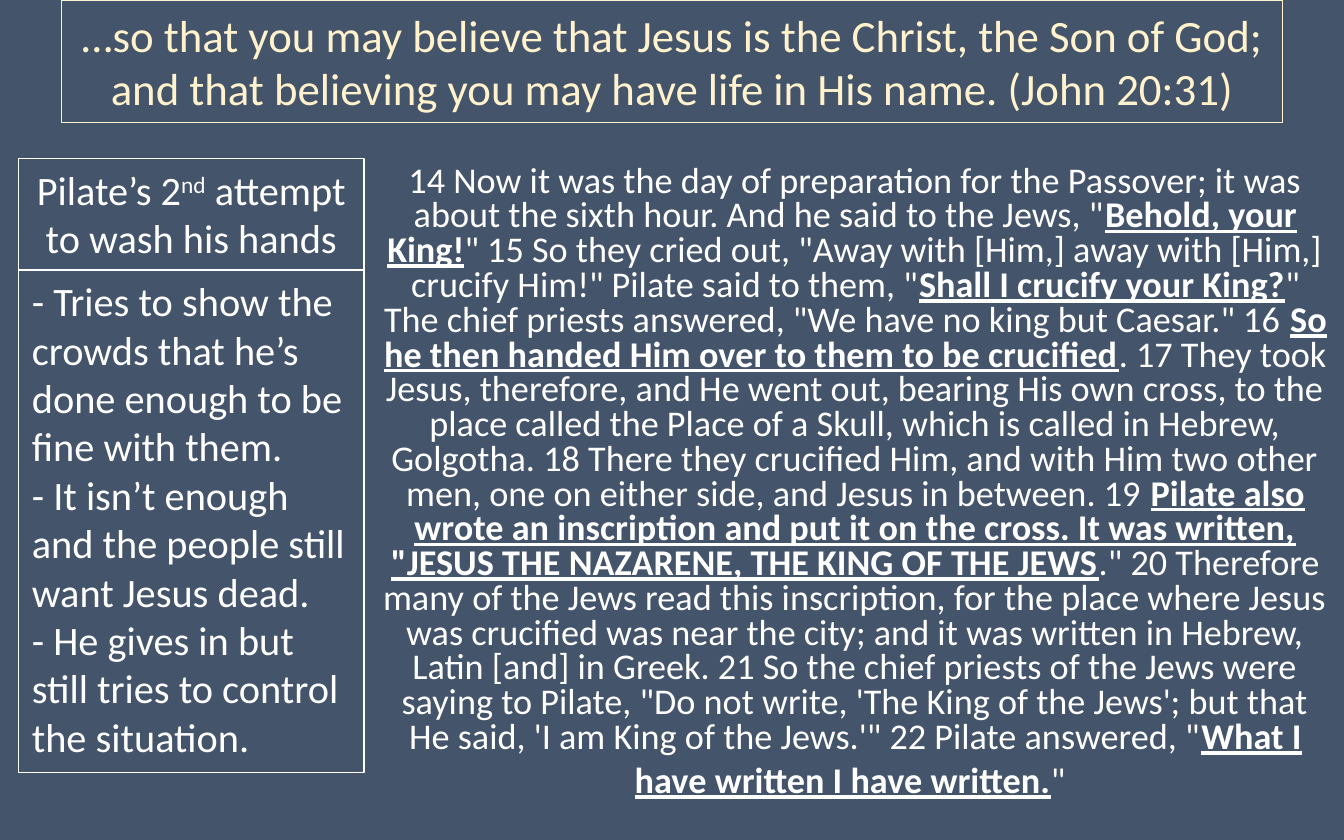
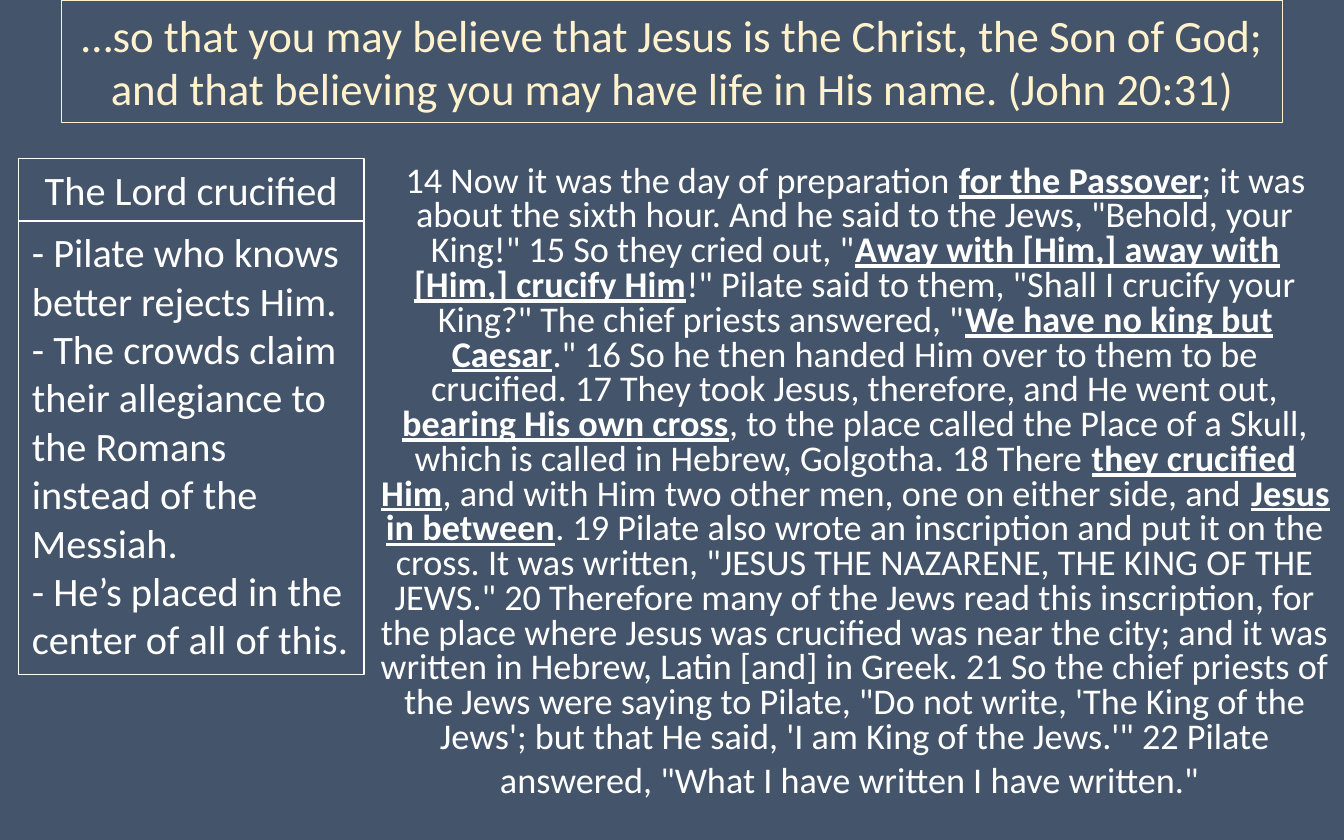
from lxml import etree
from pptx import Presentation
from pptx.dml.color import RGBColor
from pptx.enum import text as t
from pptx.oxml import ns
from pptx.util import Pt

COLORS = {"background": "44546A", "banner": "FFF2CC", "text": "FFFFFF"}
FONT = "Calibri"

BANNER_VERSE = (
    "…so that you may believe that Jesus is the Christ, the Son of God; "
    "and that believing you may have life in His name. (John 20:31)"
)
PASSAGE_VERSES = [
    "14 Now it was the day of preparation for the Passover; it was about the sixth hour. "
    'And he said to the Jews, "Behold, your King!"',
    '15 So they cried out, "Away with [Him,] away with [Him,] crucify Him!" '
    'Pilate said to them, "Shall I crucify your King?" '
    'The chief priests answered, "We have no king but Caesar."',
    "16 So he then handed Him over to them to be crucified.",
    "17 They took Jesus, therefore, and He went out, bearing His own cross, to the place "
    "called the Place of a Skull, which is called in Hebrew, Golgotha.",
    "18 There they crucified Him, and with Him two other men, one on either side, "
    "and Jesus in between.",
    "19 Pilate also wrote an inscription and put it on the cross. "
    'It was written, "JESUS THE NAZARENE, THE KING OF THE JEWS."',
    "20 Therefore many of the Jews read this inscription, for the place where Jesus was "
    "crucified was near the city; and it was written in Hebrew, Latin [and] in Greek.",
    '21 So the chief priests of the Jews were saying to Pilate, "Do not write, '
    "'The King of the Jews'; but that He said, 'I am King of the Jews.'\"",
    '22 Pilate answered, "What I have written I have written."',
]
# Line counts give the heights of the side boxes; emphasis lists phrases in reading order.
SLIDES = [
    {
        "heading": [("Pilate’s 2", {}), ("nd", {"baseline": 30000}),
                    (" attempt to wash his hands", {})],
        "heading_lines": 2,
        "points": [
            "- Tries to show the crowds that he’s done enough to be fine with them.",
            "- It isn’t enough and the people still want Jesus dead.",
            "- He gives in but still tries to control the situation.",
        ],
        "point_lines": 10,
        "emphasis": [
            "Behold, your King!",
            "Shall I crucify your King?",
            "So he then handed Him over to them to be crucified",
            "Pilate also wrote an inscription and put it on the cross. "
            'It was written, "JESUS THE NAZARENE, THE KING OF THE JEWS',
            "What I have written I have written.",
        ],
    },
    {
        "heading": [("The Lord crucified", {})],
        "heading_lines": 1,
        "points": [
            "- Pilate who knows better rejects Him.",
            "- The crowds claim their allegiance to the Romans instead of the Messiah.",
            "- He’s placed in the center of all of this.",
        ],
        "point_lines": 9,
        "emphasis": [
            "for the Passover",
            "Away with [Him,] away with [Him,] crucify Him",
            "We have no king but Caesar",
            "bearing His own cross",
            "they crucified Him",
            "Jesus in between",
        ],
    },
]

SLIDE_SIZE = (720, 450)
BANNER = (33, 0, 654, 65.5)
TOP = 85
SIDE_LEFT, SIDE_WIDTH = 10, 185
SIDE_LINE, SIDE_PADDING = 26.2, 7.2
PASSAGE_BOX = (196.6, TOP, 523.4, 365)
BANNER_SIZE, SIDE_SIZE, PASSAGE_SIZE, CLOSING_SIZE = 24, 21.6, 19.4, 25.9
STRONG = {"bold": True, "underline": True}


def place(shape, box):
    for name, value in zip(("left", "top", "width", "height"), box):
        setattr(shape, name, Pt(value))


def outline(shape, color):
    shape.line.color.rgb = RGBColor.from_string(COLORS[color])
    shape.line.width = Pt(0.75)


def write(paragraph, pieces, size, color="text", **layout):
    """Fill a paragraph with (text, format) pieces."""
    for name, value in layout.items():
        setattr(paragraph, name, value)
    for words, style in pieces:
        run = paragraph.add_run()
        run.text = words
        values = {"name": FONT, "size": Pt(size), **style}
        baseline = values.pop("baseline", None)
        for name, value in values.items():
            setattr(run.font, name, value)
        run.font.color.rgb = RGBColor.from_string(COLORS[color])
        if baseline:
            run._r.get_or_add_rPr().set("baseline", str(baseline))


def emphasize(passage, phrases):
    """Split the passage into plain and strong pieces."""
    pieces = []
    for phrase in phrases:
        plain, passage = passage.split(phrase, 1)
        pieces += [(plain, {}), (phrase, STRONG)]
    return pieces + [(passage, {})]


def add_banner(slide):
    banner = slide.shapes.title
    place(banner, BANNER)
    outline(banner, "banner")
    frame = banner.text_frame
    frame.auto_size = t.MSO_AUTO_SIZE.NONE
    frame.vertical_anchor = t.MSO_ANCHOR.MIDDLE
    write(frame.paragraphs[0], [(BANNER_VERSE, {})], BANNER_SIZE, "banner",
          alignment=t.PP_ALIGN.CENTER)


def add_passage(slide, phrases):
    body = slide.placeholders[1]
    place(body, PASSAGE_BOX)
    body.text_frame.auto_size = t.MSO_AUTO_SIZE.NONE
    paragraph = body.text_frame.paragraphs[0]
    properties = paragraph._p.get_or_add_pPr()
    properties.set("marL", "0")
    properties.set("indent", "0")
    etree.SubElement(properties, ns.qn("a:buNone"))
    pieces = emphasize(" ".join(PASSAGE_VERSES), phrases)
    # The larger closing space sets the height of the last line.
    pieces.append((" ", {"size": Pt(CLOSING_SIZE)}))
    write(paragraph, pieces, PASSAGE_SIZE, alignment=t.PP_ALIGN.CENTER,
          line_spacing=0.8, space_before=Pt(0))


def add_side_box(slide, top, lines, paragraphs, alignment):
    """Add an outlined box and return the position of its bottom edge."""
    height = lines * SIDE_LINE + SIDE_PADDING
    box = slide.shapes.add_textbox(
        *(Pt(value) for value in (SIDE_LEFT, top, SIDE_WIDTH, height)))
    outline(box, "text")
    frame = box.text_frame
    frame.word_wrap = True
    frame.auto_size = t.MSO_AUTO_SIZE.SHAPE_TO_FIT_TEXT
    for index, pieces in enumerate(paragraphs):
        paragraph = frame.add_paragraph() if index else frame.paragraphs[0]
        write(paragraph, pieces, SIDE_SIZE, alignment=alignment)
    return top + height


def main():
    presentation = Presentation()
    presentation.slide_width, presentation.slide_height = map(Pt, SLIDE_SIZE)
    background = presentation.slide_master.background.fill
    background.solid()
    background.fore_color.rgb = RGBColor.from_string(COLORS["background"])
    for content in SLIDES:
        slide = presentation.slides.add_slide(presentation.slide_layouts[1])
        add_banner(slide)
        add_passage(slide, content["emphasis"])
        bottom = add_side_box(slide, TOP, content["heading_lines"],
                              [content["heading"]], t.PP_ALIGN.CENTER)
        add_side_box(slide, bottom, content["point_lines"],
                     [[(point, {})] for point in content["points"]], t.PP_ALIGN.LEFT)
    presentation.save("out.pptx")


if __name__ == "__main__":
    main()
